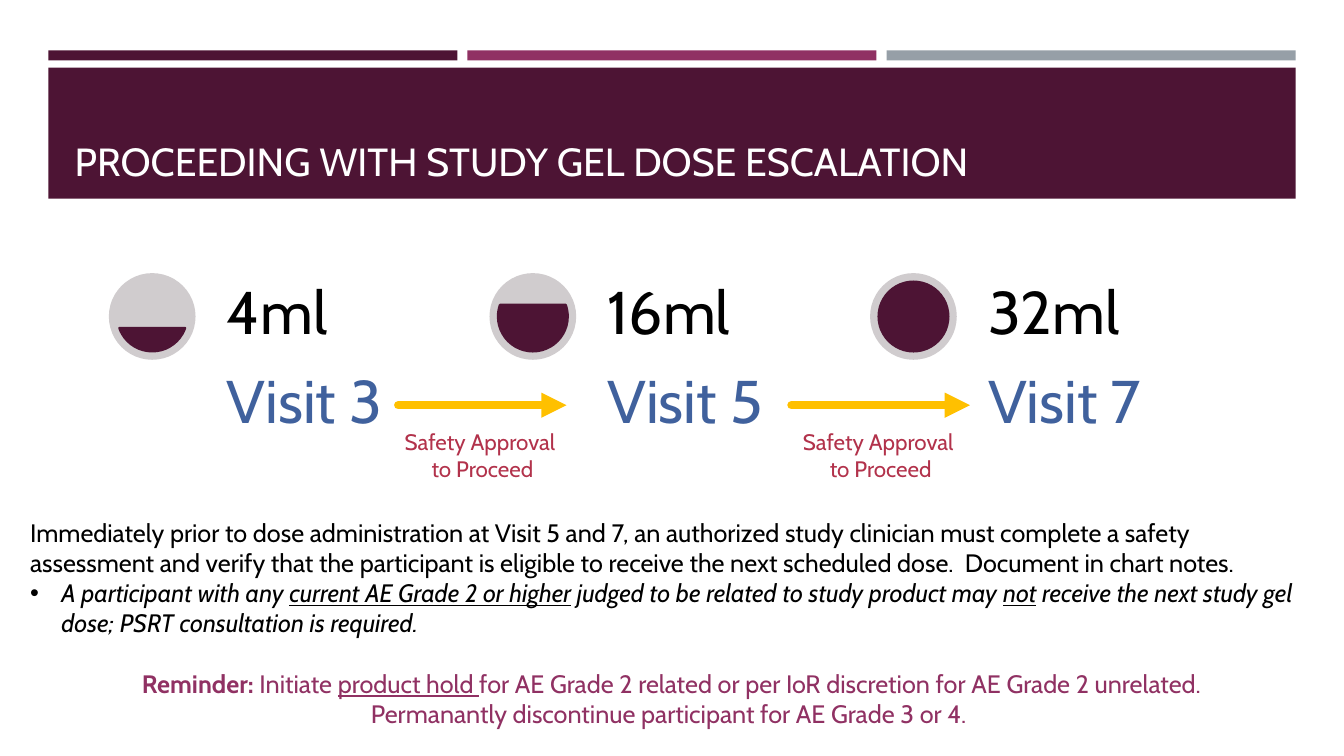
"""Build the dose escalation slide."""
import math

from lxml import etree
from pptx import Presentation
from pptx.dml.color import RGBColor
from pptx.enum.shapes import MSO_CONNECTOR, MSO_SHAPE
from pptx.enum.text import MSO_ANCHOR, PP_ALIGN
from pptx.oxml.ns import qn
from pptx.util import Inches, Pt

RECT, OVAL, CHORD = MSO_SHAPE.RECTANGLE, MSO_SHAPE.OVAL, MSO_SHAPE.CHORD
LINE = MSO_CONNECTOR.STRAIGHT
TOP, BOTTOM = MSO_ANCHOR.TOP, MSO_ANCHOR.BOTTOM
LEFT, CENTER = PP_ALIGN.LEFT, PP_ALIGN.CENTER
FONT = "Cabin"
PLUM, ROSE, SLATE, GREY = "4D1434", "903163", "969FA7", "D0CCCE"
BLUE, RED, GOLD, BLACK, WHITE = "40619D", "B2324B", "FFC000", "000000", "FFFFFF"

DOSES = [("4ml", "Visit 3", 1 / 3), ("16ml", "Visit 5", 2 / 3), ("32ml", "Visit 7", 1)]
ARROWS = [(3.95, 1.67), (7.85, 1.77)]
NEED = (
    "Immediately prior to dose administration at Visit 5 and 7, an authorized "
    "study clinician must complete a safety assessment and verify that the "
    "participant is eligible to receive the next scheduled dose.  Document in chart notes."
)
RULE = [
    ("A participant with any ", ""),
    ("current AE Grade 2 or higher", "u"),
    (" judged to be related to study product may ", ""),
    ("not", "u"),
    (" receive the next study gel dose; PSRT consultation is required.", ""),
]
HOLD = [
    ("Reminder: ", "b"),
    ("Initiate ", ""),
    ("product hold ", "u"),
    ("for AE Grade 2 related or per IoR discretion for AE Grade 2 unrelated.", ""),
]
STOP = "Permanantly discontinue participant for AE Grade 3 or 4. "


def paint(color, hue):
    """Set a solid colour from a hex string."""
    color.rgb = RGBColor.from_string(hue)


def style(para, size, hue, align=LEFT):
    """Format every run of a paragraph."""
    para.alignment = align
    for run in para.runs:
        run.font.name, run.font.size = FONT, Pt(size)
        paint(run.font.color, hue)


def shape(slide, kind, x, y, w, h, hue):
    """Add a flat filled shape."""
    item = slide.shapes.add_shape(kind, Inches(x), Inches(y), Inches(w), Inches(h))
    item.shadow.inherit = False
    item.fill.solid()
    paint(item.fill.fore_color, hue)
    item.line.fill.background()
    return item


def text(slide, x, y, w, h, words, size, hue, align=LEFT, anchor=TOP, pad=0.05):
    """Add a wrapped text box and return its frame."""
    box = slide.shapes.add_textbox(Inches(x), Inches(y), Inches(w), Inches(h))
    frame = box.text_frame
    frame.word_wrap, frame.vertical_anchor = True, anchor
    frame.margin_top = frame.margin_bottom = Inches(pad)
    frame.margin_left = frame.margin_right = Inches(max(pad, 0.1))
    frame.text = words
    for para in frame.paragraphs:
        style(para, size, hue, align)
    return frame


def header(slide, x, y, w):
    """Draw the three strips and the title band."""
    gap = 0.1
    strip = (w - 2 * gap) / 3
    for i, hue in enumerate((PLUM, ROSE, SLATE)):
        shape(slide, RECT, x + i * (strip + gap), y, strip, 0.1, hue)
    band = shape(slide, RECT, x, y + 0.17, w, 1.3, PLUM)
    title = slide.shapes.title
    slide.shapes._spTree.remove(band._element)
    slide.shapes._spTree.insert(2, band._element)
    title.left, title.top = Inches(x + 0.16), Inches(y + 0.27)
    title.width, title.height = Inches(w - 0.3), Inches(1.11)
    frame = title.text_frame
    frame.text = "PROCEEDING WITH STUDY GEL DOSE ESCALATION"
    frame.vertical_anchor = BOTTOM
    style(frame.paragraphs[0], 28, WHITE)


def dose(slide, x, y, amount, visit, level):
    """Draw a dial filled to a level, with its amount and visit."""
    size, rim = 0.86, 0.085
    shape(slide, OVAL, x, y, size, size, GREY)
    core = size - 2 * rim
    fill = shape(slide, CHORD, x + rim, y + rim, core, core, PLUM)
    angle = math.degrees(math.asin(1 - 2 * level))
    fill.adjustments[0] = round(angle % 360 * 0.6, 3)
    fill.adjustments[1] = round((180 - angle) * 0.6, 3)
    paint(fill.line.color, PLUM)
    fill.line.width = Pt(1.75)
    rows = ((y, amount, BLACK, BOTTOM), (y + size, visit, BLUE, TOP))
    for top, words, hue, anchor in rows:
        frame = text(slide, x + 1.05, top, 2.55, size, words, 43, hue,
                     anchor=anchor, pad=0.12)
        frame.paragraphs[0].line_spacing = 0.9


def arrow(slide, x, y, w):
    """Draw an approval arrow with its label below."""
    line = slide.shapes.add_connector(LINE, Inches(x), Inches(y), Inches(x + w), Inches(y))
    paint(line.line.color, GOLD)
    line.line.width = Pt(6)
    edge = line.line._get_or_add_ln()
    edge.set("cap", "rnd")
    etree.SubElement(edge, qn("a:tailEnd"), type="triangle")
    etree.SubElement(line._element.spPr, qn("a:effectLst"))
    wide = 2.08
    text(slide, x + (w - wide) / 2, y + 0.18, wide, 0.64,
         "Safety Approval \nto Proceed", 16, RED, CENTER)


def mixed(para, parts, hue, align=LEFT, italic=False):
    """Fill a paragraph with runs marked bold or underlined."""
    for words, mark in parts:
        run = para.add_run()
        run.text = words
        run.font.bold, run.font.underline = mark == "b", mark == "u"
        run.font.italic = italic
    style(para, 18, hue, align)


def notes(slide, x, y, w, h):
    """Write the safety rule and the reminder."""
    frame = text(slide, x, y, w, h, NEED, 18, BLACK)
    rule = frame.add_paragraph()
    mixed(rule, RULE, BLACK, italic=True)
    props = rule._p.get_or_add_pPr()
    props.set("marL", str(Inches(0.31)))
    props.set("indent", str(-Inches(0.31)))
    etree.SubElement(props, qn("a:buFont"), typeface="Arial")
    etree.SubElement(props, qn("a:buChar"), char="•")
    hold = frame.add_paragraph()
    hold.space_before = Pt(21.75)
    mixed(hold, HOLD, ROSE, CENTER)
    mixed(frame.add_paragraph(), [(STOP, "")], ROSE, CENTER)


def main():
    """Build and save the slide."""
    deck = Presentation()
    deck.slide_width, deck.slide_height = Inches(13.33), Inches(7.5)
    slide = deck.slides.add_slide(deck.slide_layouts[5])
    header(slide, 0.48, 0.5, 12.37)
    for i, item in enumerate(DOSES):
        dose(slide, 1.08 + i * 3.775, 2.71, *item)
    for x, w in ARROWS:
        arrow(slide, x, 4.02, w)
    notes(slide, 0.2, 5.08, 12.92, 2.4)
    deck.save("out.pptx")


if __name__ == "__main__":
    main()
